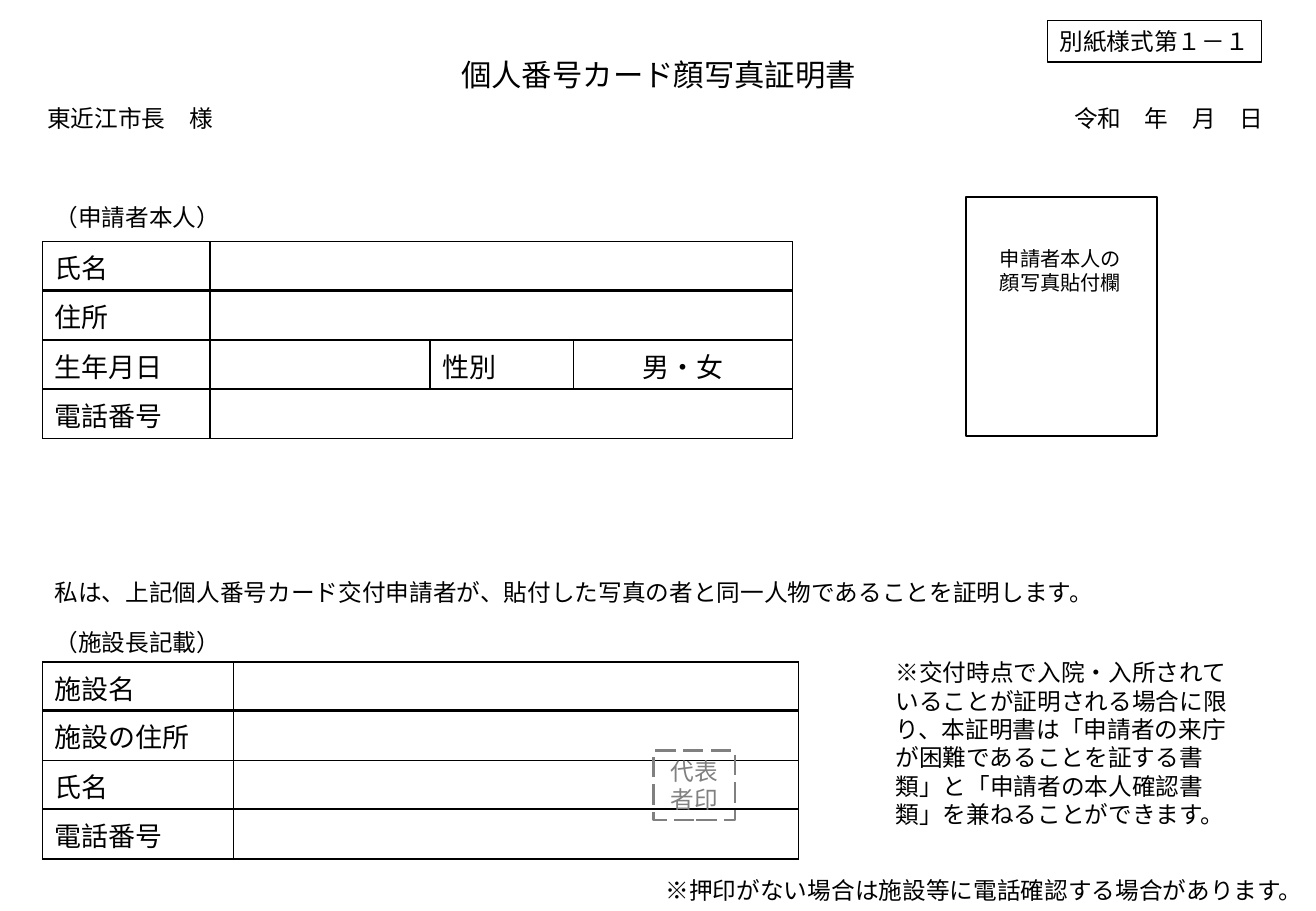
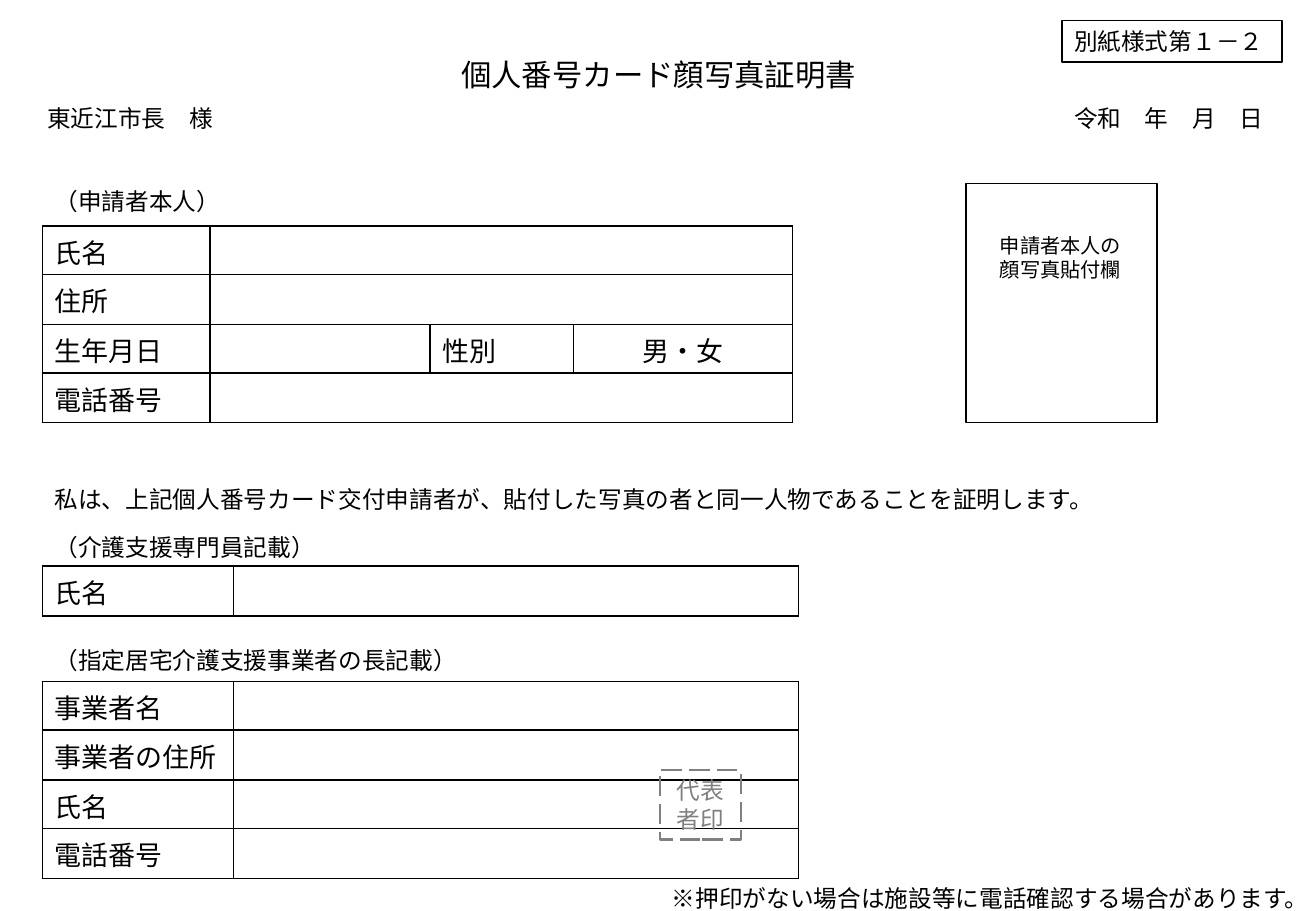
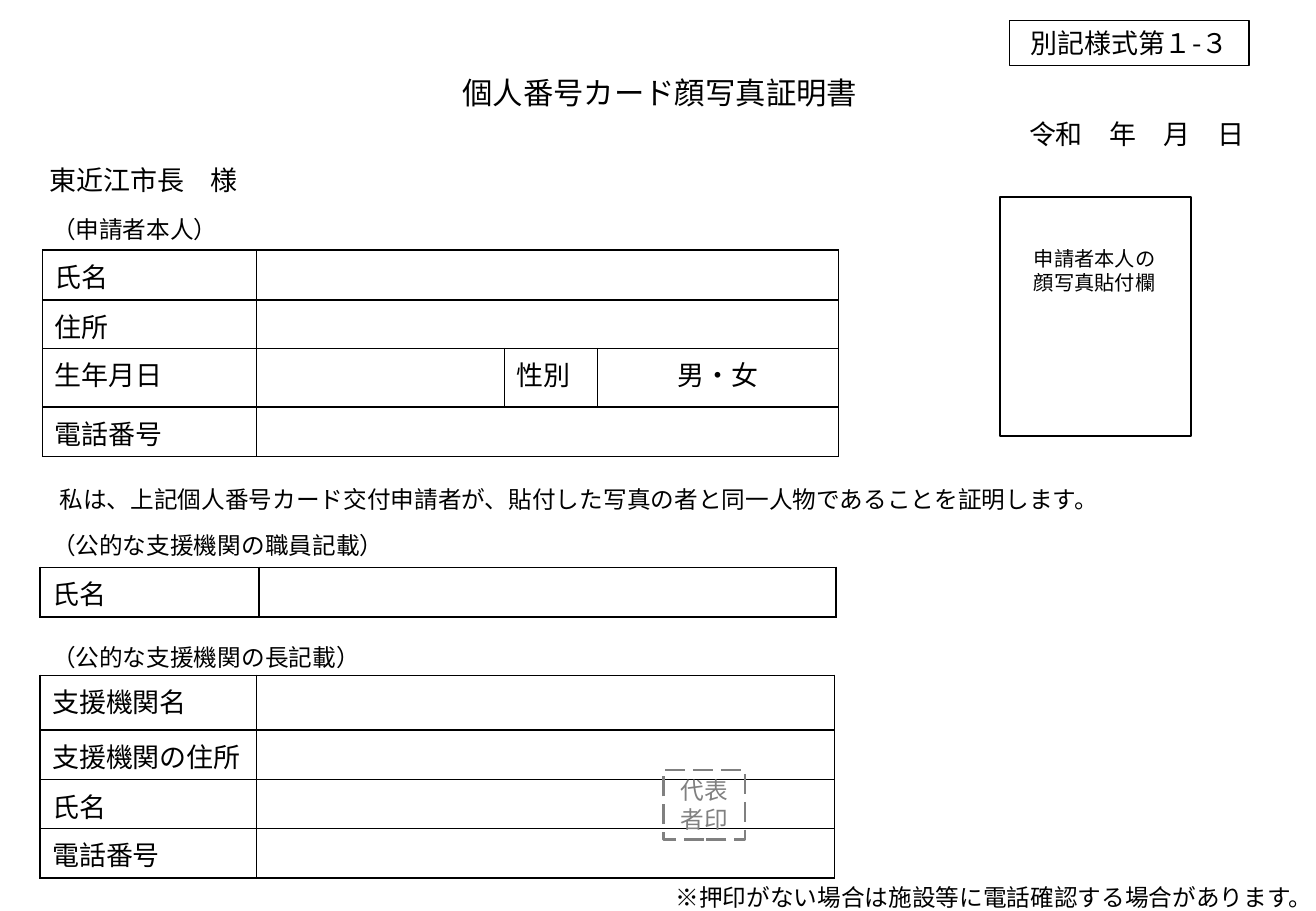
"""Build three photo certificate forms for the individual number card."""
from dataclasses import dataclass

from lxml import etree
from pptx import Presentation
from pptx.dml.color import RGBColor
from pptx.enum.dml import MSO_LINE
from pptx.enum.shapes import MSO_SHAPE
from pptx.enum.text import MSO_ANCHOR, MSO_AUTO_SIZE, PP_ALIGN
from pptx.oxml.ns import qn
from pptx.util import Pt

SCALE = 9144
BLACK = RGBColor(0, 0, 0)
GRAY = RGBColor(128, 128, 128)
WHITE = RGBColor(255, 255, 255)
LEFT, MID = PP_ALIGN.LEFT, PP_ALIGN.CENTER
TOP, CORE = MSO_ANCHOR.TOP, MSO_ANCHOR.MIDDLE
GROW = MSO_AUTO_SIZE.SHAPE_TO_FIT_TEXT
RECT = MSO_SHAPE.RECTANGLE
DASH = MSO_LINE.LONG_DASH
GOTHIC, LATIN = "Noto Sans CJK JP", "Calibri"
ROWS = (40, 41, 40, 41)

TITLE = "個人番号カード顔写真証明書"
MAYOR = "東近江市長　様"
DATE = "令和　年　月　日"
PHOTO = "申請者本人の\n顔写真貼付欄"
OATH = "私は、上記個人番号カード交付申請者が、貼付した写真の者と同一人物であることを証明します。"
SEAL = "代表者印"
PHONE = "※押印がない場合は施設等に電話確認する場合があります。"
RULE = (
    "※交付時点で入院・入所されていることが証明される場合に限り、"
    "本証明書は「申請者の来庁が困難であることを証する書類」と"
    "「申請者の本人確認書類」を兼ねることができます。"
)
SELF = (
    ("氏名", "", "", ""),
    ("住所", "", "", ""),
    ("生年月日", "", "性別", "男・女"),
    ("電話番号", "", "", ""),
)


@dataclass(frozen=True)
class Box:
    """A text box, with an outline when edge is above zero."""

    x: int
    y: int
    w: int
    h: int
    text: str = ""
    size: int = 14
    font: str = GOTHIC
    align: int = LEFT
    edge: float = 0
    ink: RGBColor = BLACK
    dash: bool = False
    anchor: int = TOP


@dataclass(frozen=True)
class Grid:
    """A ruled table with its column widths and row heights."""

    x: int
    y: int
    cols: tuple[int, ...]
    rows: tuple[int, ...]
    cells: tuple[tuple[str, ...], ...]
    thick: bool = False


@dataclass(frozen=True)
class Form:
    """One slide: its title, boxes and tables."""

    title: Box
    grids: tuple[Grid, ...]
    boxes: tuple[Box, ...]


def px(*vals: int) -> list[int]:
    """Turn px into EMU."""
    return [val * SCALE for val in vals]


def apply(obj, form: dict) -> None:
    """Set each named attribute on an object."""
    for name, val in form.items():
        setattr(obj, name, val)


def write(frame, text: str, size: int, font: str, align, ink) -> None:
    """Fill a text frame, one paragraph per line."""
    frame.text = text
    for para in frame.paragraphs:
        para.alignment = align
        for run in para.runs:
            apply(run.font, {"size": Pt(size), "name": font, "bold": False})
            run.font.color.rgb = ink
            if font == GOTHIC:
                east = etree.SubElement(run.font._element, qn("a:ea"))
                east.set("typeface", font)


def fill_box(shape, box: Box) -> None:
    """Format the frame of a shape and write its text."""
    frame = shape.text_frame
    apply(frame, {"word_wrap": True, "vertical_anchor": box.anchor})
    if box.text:
        frame.auto_size = GROW
        write(frame, box.text, box.size, box.font, box.align, box.ink)


def draw_box(slide, box: Box) -> None:
    """Draw a plain or outlined text box."""
    place = px(box.x, box.y, box.w, box.h)
    if box.edge:
        shape = slide.shapes.add_shape(RECT, *place)
        shape.shadow.inherit = False
        shape.fill.background()
        shape.line.color.rgb = box.ink
        shape.line.width = Pt(box.edge)
        if box.dash:
            shape.line.dash_style = DASH
    else:
        shape = slide.shapes.add_textbox(*place)
    fill_box(shape, box)


def rule_cell(cell, top: int, base: int) -> None:
    """Add four black borders to a cell."""
    props = cell._tc.get_or_add_tcPr()
    sides = {"lnL": 1, "lnR": 1, "lnT": top, "lnB": base}
    for spot, (side, width) in enumerate(sides.items()):
        line = etree.Element(qn(f"a:{side}"), w=str(Pt(width)))
        fill = etree.SubElement(line, qn("a:solidFill"))
        etree.SubElement(fill, qn("a:srgbClr"), val=str(BLACK))
        props.insert(spot, line)


def draw_grid(slide, grid: Grid) -> None:
    """Draw a table, joining the blank cells of four-column rows."""
    size = px(grid.x, grid.y, sum(grid.cols), sum(grid.rows))
    table = slide.shapes.add_table(len(grid.rows), len(grid.cols), *size).table
    apply(table, {"first_row": False, "horz_banding": False})
    for col, wide in zip(table.columns, px(*grid.cols)):
        col.width = wide
    for row, high in zip(table.rows, px(*grid.rows)):
        row.height = high
    for r, words in enumerate(grid.cells):
        for c, word in enumerate(words):
            cell = table.cell(r, c)
            cell.fill.solid()
            cell.fill.fore_color.rgb = WHITE
            rule_cell(cell, 1 + (grid.thick and r == 1), 1 + (grid.thick and r == 0))
            if word:
                align = MID if c == 3 else LEFT
                write(cell.text_frame, word, 16, GOTHIC, align, BLACK)
        if len(words) == 4 and not any(words[1:]):
            table.cell(r, 1).merge(table.cell(r, 3))


def photo(x: int, y: int) -> tuple[Box, Box]:
    """Return the photo frame and its caption."""
    return Box(x, y, 157, 197, edge=1), Box(x + 18, y + 36, 122, 50, PHOTO, 12)


def stamp(x: int, y: int, foot: int) -> tuple[Box, Box]:
    """Return the dashed seal and the footnote that starts below it."""
    seal = Box(x, y, 67, 57, SEAL, 14, LATIN, MID, 1.5, GRAY, True, CORE)
    return seal, Box(x, foot, 527, 34, PHONE, font=LATIN)


def head(x: int, y: int, text: str) -> Box:
    """Return the heading above a table."""
    return Box(x, y, 617, 34, text)


def office(*names: str) -> tuple[tuple[str, str], ...]:
    """Return label rows, each with a blank field."""
    return tuple((name, "") for name in names)


def forms() -> tuple[Form, ...]:
    """Return the contents of the slides."""
    title = Box(365, 41, 354, 40, TITLE, 18, align=MID)
    mayor = Box(29, 81, 354, 34, MAYOR)
    date = Box(874, 81, 191, 34, DATE)
    wide, pair = (138, 181, 118, 180), (157, 465)
    return (
        Form(
            title,
            (
                Grid(35, 199, wide, ROWS, SELF, True),
                Grid(35, 545, pair, ROWS,
                     office("施設名", "施設の住所", "氏名", "電話番号"), True),
            ),
            (
                mayor, date, *photo(795, 162),
                Box(35, 471, 906, 57, OATH),
                head(35, 162, "（申請者本人）"),
                head(35, 512, "（施設長記載）"),
                Box(862, 17, 176, 34, "別紙様式第１－１", edge=0.75),
                *stamp(538, 618, 716),
                Box(727, 537, 311, 151, RULE, font=LATIN),
            ),
        ),
        Form(
            title,
            (
                Grid(35, 186, wide, ROWS, SELF),
                Grid(35, 561, pair, ROWS,
                     office("事業者名", "事業者の住所", "氏名", "電話番号")),
                Grid(35, 466, pair, (41,), office("氏名")),
            ),
            (
                mayor, date, *photo(795, 151),
                Box(35, 394, 906, 57, OATH),
                head(35, 149, "（申請者本人）"),
                head(35, 527, "（指定居宅介護支援事業者の長記載）"),
                head(35, 434, "（介護支援専門員記載）"),
                Box(874, 17, 181, 34, "別紙様式第１－２", edge=0.75),
                *stamp(543, 634, 723),
            ),
        ),
        Form(
            Box(156, 56, 774, 40, TITLE, 18, align=MID),
            (
                Grid(35, 206, (176, 204, 77, 198), (41, 40, 48, 41), SELF),
                Grid(33, 556, (178, 476), (45, 41, 40, 41),
                     office("支援機関名", "支援機関の住所", "氏名", "電話番号")),
                Grid(33, 467, (180, 475), (41,), office("氏名")),
            ),
            (
                Box(31, 130, 354, 37, MAYOR, 16),
                Box(837, 92, 223, 37, DATE, 16),
                *photo(823, 162),
                Box(39, 394, 1009, 34, OATH),
                head(33, 172, "（申請者本人）"),
                head(33, 524, "（公的な支援機関の長記載）"),
                head(33, 432, "（公的な支援機関の職員記載）"),
                Box(831, 17, 197, 37, "別記様式第１-３", 16, align=MID, edge=0.75),
                *stamp(546, 634, 722),
            ),
        ),
    )


def main() -> None:
    """Draw every form and save the deck."""
    deck = Presentation()
    deck.slide_width, deck.slide_height = px(1083, 750)
    for form in forms():
        slide = deck.slides.add_slide(deck.slide_layouts[5])
        box, title = form.title, slide.shapes.title
        sides = ("left", "top", "width", "height")
        apply(title, dict(zip(sides, px(box.x, box.y, box.w, box.h))))
        fill_box(title, box)
        for grid in form.grids:
            draw_grid(slide, grid)
        for item in form.boxes:
            draw_box(slide, item)
    deck.save("out.pptx")


if __name__ == "__main__":
    main()
